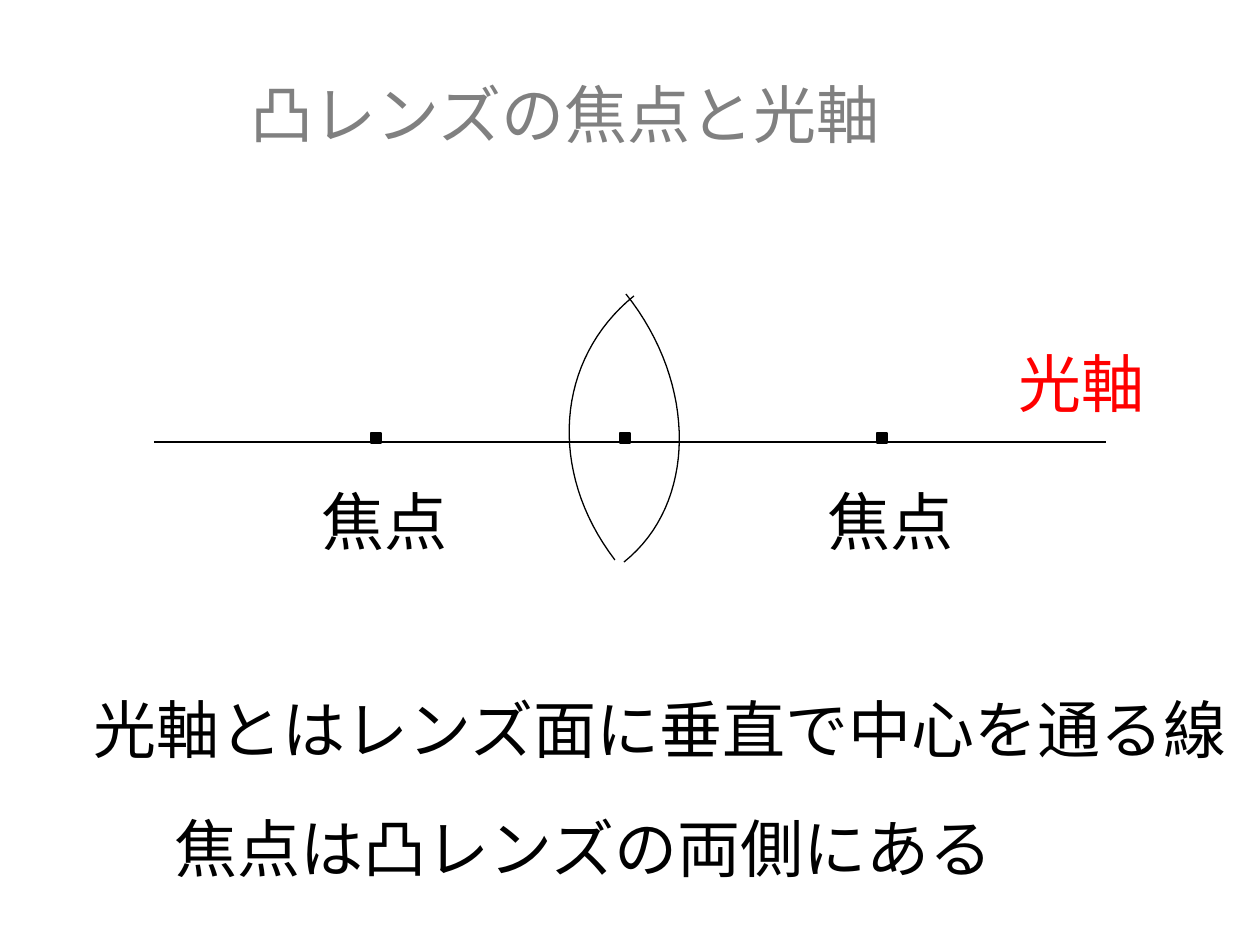
from pptx import Presentation
from pptx.dml.color import RGBColor
from pptx.enum.shapes import MSO_CONNECTOR, MSO_SHAPE
from pptx.enum.text import MSO_ANCHOR, MSO_AUTO_SIZE, PP_ALIGN
from pptx.oxml.ns import qn
from pptx.util import Emu, Pt
from lxml.etree import SubElement

BLACK = RGBColor(0x00, 0x00, 0x00)
GRAY = RGBColor(0x80, 0x80, 0x80)
RED = RGBColor(0xFF, 0x00, 0x00)
SCALE = 914400 / 126  # EMU per px


def emu(px):
    return Emu(round(px * SCALE))


class Sketch:
    font = "Noto Sans CJK JP"
    size = Pt(36)
    width = Pt(0.75)

    def __init__(self, slide):
        self.slide = slide

    def letter(self, shape, box, text, color):
        shape.left, shape.top, shape.width, shape.height = map(emu, box)
        frame = shape.text_frame
        frame.auto_size = MSO_AUTO_SIZE.NONE
        frame.word_wrap = False
        frame.vertical_anchor = MSO_ANCHOR.TOP
        frame.margin_left = frame.margin_right = 0
        frame.margin_top = frame.margin_bottom = 0
        para = frame.paragraphs[0]
        para.alignment = PP_ALIGN.CENTER
        run = para.add_run()
        run.text = text
        run.font.name = self.font
        run.font.size = self.size
        run.font.color.rgb = color
        SubElement(run.font._element, qn("a:ea"), typeface=self.font)

    def title(self, box, text, color):
        self.letter(self.slide.shapes.title, box, text, color)

    def label(self, box, text, color=BLACK):
        shape = self.slide.shapes.add_textbox(*map(emu, box))
        self.letter(shape, box, text, color)

    def ink(self, shape):
        shape.line.color.rgb = BLACK
        shape.line.width = self.width

    def line(self, start, end):
        shape = self.slide.shapes.add_connector(
            MSO_CONNECTOR.STRAIGHT, *map(emu, start + end))
        self.ink(shape)
        SubElement(shape._element.spPr, qn("a:effectLst"))

    def dot(self, x, y, side=10):
        box = (x - side // 2, y - side // 2, side, side)
        shape = self.slide.shapes.add_shape(MSO_SHAPE.RECTANGLE, *map(emu, box))
        shape.shadow.inherit = False
        shape.fill.solid()
        shape.fill.fore_color.rgb = BLACK
        self.ink(shape)

    def arc(self, *knots, steps=32):
        """Draw a cubic curve through two ends and two control points."""
        points = []
        for i in range(steps + 1):
            t = i / steps
            u = 1 - t
            parts = (u ** 3, 3 * u * u * t, 3 * u * t * t, t ** 3)
            points.append([sum(w * k[axis] for w, k in zip(parts, knots)) * SCALE
                           for axis in (0, 1)])
        pen = self.slide.shapes.build_freeform(*points[0], scale=1.0)
        pen.add_line_segments(points[1:], close=False)
        shape = pen.convert_to_shape()
        shape.shadow.inherit = False
        shape.fill.background()
        self.ink(shape)


def main():
    deck = Presentation()
    deck.slide_width, deck.slide_height = emu(1260), emu(945)
    sketch = Sketch(deck.slides.add_slide(deck.slide_layouts[5]))

    # Title
    sketch.title((113, 76, 904, 90), "凸レンズの焦点と光軸", GRAY)

    # Lens
    sketch.arc((626, 294), (698, 384), (697, 504), (624, 562))
    sketch.arc((615, 560), (547, 471), (556, 359), (634, 296))

    # Optical axis
    sketch.line((154, 442), (1106, 442))
    sketch.label((1007, 344, 148, 69), "光軸", RED)

    # Lens centre and focal points
    for x in (376, 625, 882):
        sketch.dot(x, 438)
    for x in (322, 828):
        sketch.label((x, 483, 126, 63), "焦点")

    # Explanations
    sketch.label((184, 690, 952, 69), "光軸とはレンズ面に垂直で中心を通る線")
    sketch.label((193, 810, 781, 63), "焦点は凸レンズの両側にある")

    deck.save("out.pptx")


if __name__ == "__main__":
    main()
